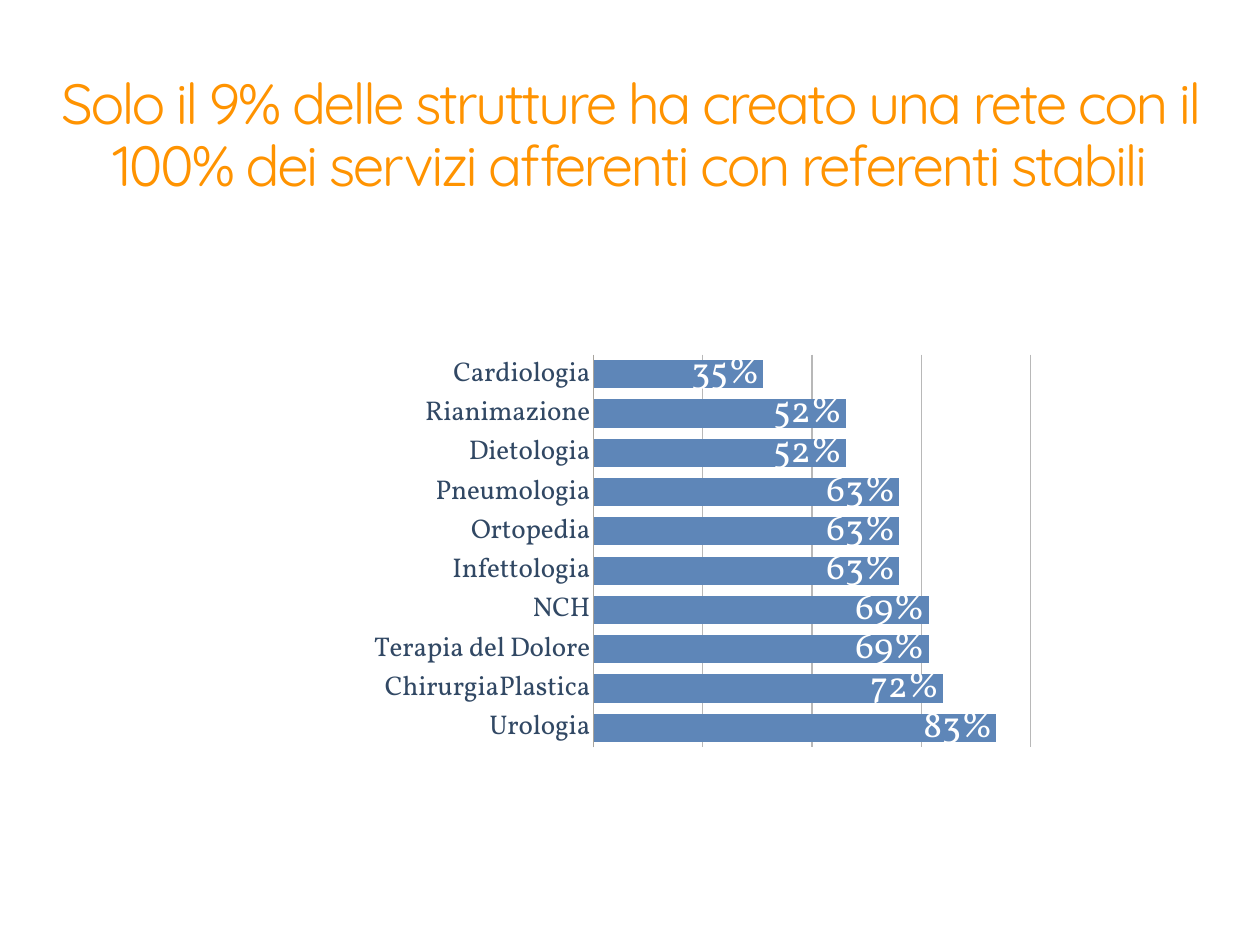
from lxml import etree
from pptx import Presentation
from pptx.chart.data import CategoryChartData
from pptx.dml.color import RGBColor
from pptx.enum.chart import XL_CHART_TYPE as ChartType
from pptx.enum.chart import XL_LABEL_POSITION as LabelPosition
from pptx.enum.chart import XL_TICK_LABEL_POSITION as TickLabelPosition
from pptx.enum.chart import XL_TICK_MARK as TickMark
from pptx.enum.text import MSO_ANCHOR as Anchor
from pptx.enum.text import PP_ALIGN as Align
from pptx.oxml.ns import qn
from pptx.util import Pt

ORANGE = RGBColor(0xFF, 0x93, 0x00)
NAVY = RGBColor(0x31, 0x48, 0x64)
BLUE = RGBColor(0x5E, 0x86, 0xB8)
WHITE = RGBColor(0xFF, 0xFF, 0xFF)
AXIS_GRAY = RGBColor(0xA8, 0xA4, 0x9D)
GRID_GRAY = RGBColor(0xB8, 0xB8, 0xB8)

TITLE = ("Solo il 9% delle strutture ha creato una rete con il "
         "100% dei servizi afferenti con referenti stabili")
SERVICES = {
    "Cardiologia": 0.35,
    "Rianimazione": 0.52,
    "Dietologia": 0.52,
    "Pneumologia": 0.63,
    "Ortopedia": 0.63,
    "Infettologia": 0.63,
    "NCH": 0.69,
    "Terapia del Dolore": 0.69,
    "ChirurgiaPlastica": 0.72,
    "Urologia": 0.83,
}
PERCENT = "#,##0%"
AXIS_MAXIMUM = 0.9
GRID_INTERVALS = 4


def style_font(font, name, size, color):
    font.name = name
    font.size = Pt(size)
    font.color.rgb = color


def style_line(line, color):
    line.color.rgb = color
    line.width = Pt(1)


def add_title(page, text):
    box = page.shapes.add_textbox(Pt(28), Pt(31), Pt(968), Pt(161))
    frame = box.text_frame
    frame.word_wrap = True
    frame.vertical_anchor = Anchor.MIDDLE
    frame.margin_left = frame.margin_right = Pt(4)
    frame.margin_top = frame.margin_bottom = Pt(4)
    para = frame.paragraphs[0]
    para.alignment = Align.CENTER
    para.line_spacing = 0.9
    span = para.add_run()
    span.text = text
    style_font(para.font, "Quicksand", 46, ORANGE)
    span.font._element.set("spc", "-200")


def place_plot(chart, **fractions):
    """Fix the inner plot area as fractions (x, y, w, h) of the chart."""
    plot_area = chart._chartSpace.chart.plotArea
    for old_layout in plot_area.findall(qn("c:layout")):
        plot_area.remove(old_layout)
    layout = etree.Element(qn("c:layout"))
    manual = etree.SubElement(layout, qn("c:manualLayout"))
    settings = {"layoutTarget": "inner", "xMode": "edge", "yMode": "edge", **fractions}
    for tag, value in settings.items():
        etree.SubElement(manual, qn(f"c:{tag}")).set("val", str(value))
    plot_area.insert(0, layout)


def style_axes(chart):
    for axis in (chart.category_axis, chart.value_axis):
        axis.major_tick_mark = axis.minor_tick_mark = TickMark.NONE
        style_font(axis.tick_labels.font, "Vollkorn", 22, NAVY)

    categories = chart.category_axis
    categories.reverse_order = True
    categories.has_major_gridlines = False
    style_line(categories.format.line, AXIS_GRAY)

    values = chart.value_axis
    values.minimum_scale = 0
    values.maximum_scale = AXIS_MAXIMUM
    values.major_unit = AXIS_MAXIMUM / GRID_INTERVALS
    values.tick_label_position = TickLabelPosition.NONE
    values.format.line.fill.background()
    style_line(values.major_gridlines.format.line, GRID_GRAY)


def style_bars(plot):
    plot.gap_width = 40
    plot.overlap = -10
    plot.vary_by_categories = False
    fill = plot.series[0].format.fill
    fill.solid()
    fill.fore_color.rgb = BLUE
    labels = plot.series[0].data_labels
    labels.show_value = True
    labels.position = LabelPosition.INSIDE_END
    labels.number_format = PERCENT
    labels.number_format_is_linked = False
    style_font(labels.font, "Vollkorn", 30, WHITE)


def add_bar_chart(page, services):
    data = CategoryChartData(number_format=PERCENT)
    data.categories = services.keys()
    data.add_series("Series 1", services.values())
    chart = page.shapes.add_chart(ChartType.BAR_CLUSTERED, Pt(283.7), Pt(259.2),
                                  Pt(556.6), Pt(362.9), data).chart
    chart.has_title = False
    chart.has_legend = False
    style_font(chart.font, "Noto Sans", 10, NAVY)
    style_axes(chart)
    style_bars(chart.plots[0])
    place_plot(chart, x=0.357, y=0.08, w=0.638, h=0.88)


def main():
    deck = Presentation()
    deck.slide_width, deck.slide_height = Pt(1024), Pt(768)
    page = deck.slides.add_slide(deck.slide_layouts[6])
    add_title(page, TITLE)
    add_bar_chart(page, SERVICES)
    deck.save("out.pptx")


if __name__ == "__main__":
    main()
